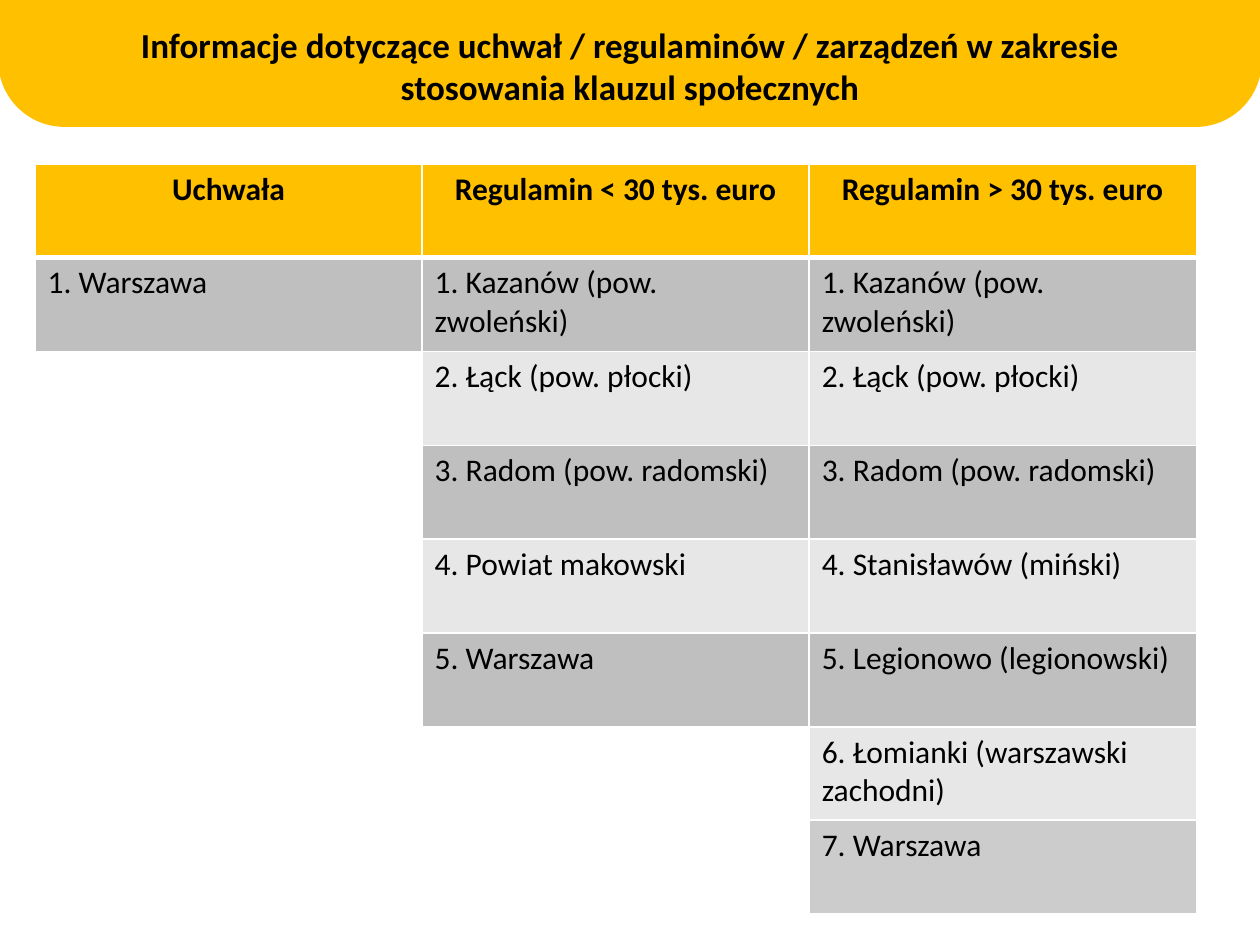
from lxml import etree
from pptx import Presentation
from pptx.dml import color
from pptx.enum import shapes, text
from pptx.oxml import ns
from pptx.util import Pt

COLORS = {
    "accent": "FFC000",
    "dark_band": "BFBFBF",
    "light_band": "E7E7E7",
    "last_band": "CCCCCC",
    "border": "FFFFFF",
    "text": "000000",
}
TITLE = ("Informacje dotyczące uchwał / regulaminów / zarządzeń "
         "w zakresie stosowania klauzul społecznych")
COLUMNS = {
    "Uchwała": ["Warszawa"],
    "Regulamin < 30 tys. euro": [
        "Kazanów (pow. zwoleński)", "Łąck (pow. płocki)",
        "Radom (pow. radomski)", "Powiat makowski", "Warszawa",
    ],
    "Regulamin > 30 tys. euro": [
        "Kazanów (pow. zwoleński)", "Łąck (pow. płocki)",
        "Radom (pow. radomski)", "Stanisławów (miński)",
        "Legionowo (legionowski)", "Łomianki (warszawski zachodni)",
        "Warszawa",
    ],
}
BANDS = ["dark_band", "light_band"] * 3 + ["last_band"]
ROW_HEIGHTS = [53.64] * 6 + [53.28] * 2


def rgb(name):
    return color.RGBColor.from_string(COLORS[name])


class SlideBuilder:
    def __init__(self, slide, font="Calibri"):
        self.slide = slide
        self.font = font

    def set_text(self, frame, content, size, bold=False, centered=False):
        frame.text = content
        paragraph = frame.paragraphs[0]
        if centered:
            paragraph.alignment = text.PP_ALIGN.CENTER
        for run in paragraph.runs:
            run.font.name = self.font
            run.font.size = Pt(size)
            run.font.bold = bold
            run.font.color.rgb = rgb("text")

    def banner(self, left, top, width, height):
        """Draw a band whose two lower corners are fully rounded."""
        shape = self.slide.shapes.add_shape(
            shapes.MSO_SHAPE.ROUND_2_SAME_RECTANGLE,
            Pt(left), Pt(top), Pt(width), Pt(height))
        shape.adjustments[0] = 0.5
        shape.adjustments[1] = 0
        shape.rotation = 180
        shape.shadow.inherit = False
        shape.fill.solid()
        shape.fill.fore_color.rgb = rgb("accent")
        shape.line.color.rgb = rgb("accent")
        shape.line.width = Pt(2)

    def title(self, content, left, top, width, height):
        box = self.slide.shapes.add_textbox(Pt(left), Pt(top), Pt(width), Pt(height))
        frame = box.text_frame
        frame.word_wrap = True
        frame.vertical_anchor = text.MSO_ANCHOR.MIDDLE
        self.set_text(frame, content, 20, bold=True, centered=True)

    def borders(self, cell, top, bottom):
        properties = cell._tc.get_or_add_tcPr()
        for side, width in (("L", 1), ("R", 1), ("T", top), ("B", bottom)):
            line = etree.SubElement(properties, ns.qn(f"a:ln{side}"), w=str(Pt(width)))
            fill = etree.SubElement(line, ns.qn("a:solidFill"))
            etree.SubElement(fill, ns.qn("a:srgbClr"), val=COLORS["border"])

    def cell(self, cell, content, band, is_header, top, bottom):
        self.borders(cell, top, bottom)
        if not content:
            cell.fill.background()
            return
        cell.fill.solid()
        cell.fill.fore_color.rgb = rgb(band)
        self.set_text(cell.text_frame, content, 18, bold=is_header, centered=is_header)

    def table(self, columns, left, top, width):
        table = self.slide.shapes.add_table(
            len(ROW_HEIGHTS), len(columns), Pt(left), Pt(top),
            Pt(width), Pt(sum(ROW_HEIGHTS))).table
        for row, height in zip(table.rows, ROW_HEIGHTS):
            row.height = Pt(height)
        for column_index, (heading, places) in enumerate(columns.items()):
            table.columns[column_index].width = Pt(width / len(columns))
            self.cell(table.cell(0, column_index), heading, "accent", True, 1, 3)
            for row_index, band in enumerate(BANDS, start=1):
                has_place = row_index <= len(places)
                content = f"{row_index}. {places[row_index - 1]}" if has_place else ""
                self.cell(table.cell(row_index, column_index), content, band,
                          False, 3 if row_index == 1 else 1, 1)


def main():
    presentation = Presentation()
    presentation.slide_width = Pt(720)
    presentation.slide_height = Pt(540)
    slide = presentation.slides.add_slide(presentation.slide_layouts[6])
    builder = SlideBuilder(slide)
    builder.banner(0, -2, 720, 73.5)
    builder.title(TITLE, 36, 3.6, 648, 67.7)
    builder.table(COLUMNS, 20, 93.6, 663.6)
    presentation.save("out.pptx")


if __name__ == "__main__":
    main()
